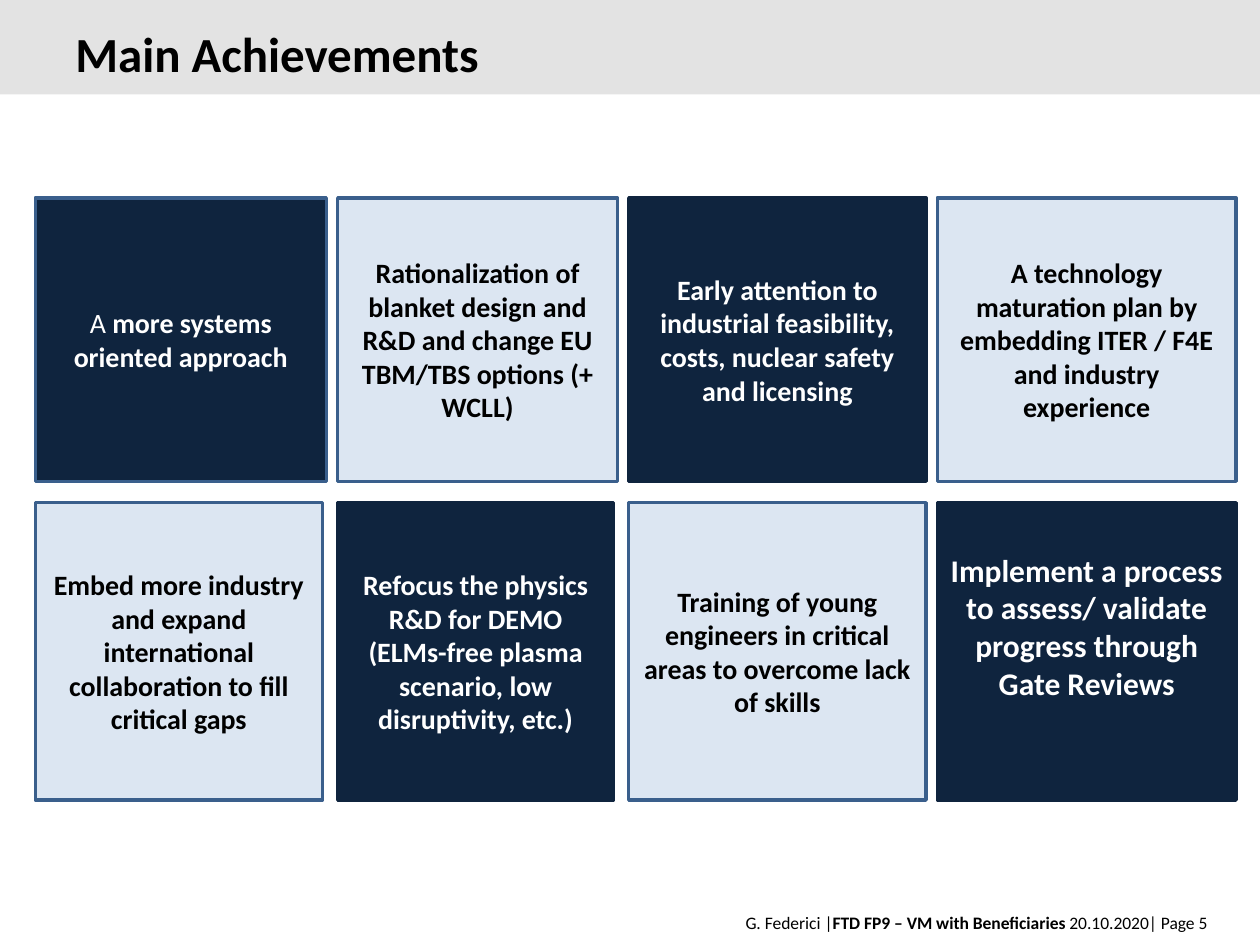
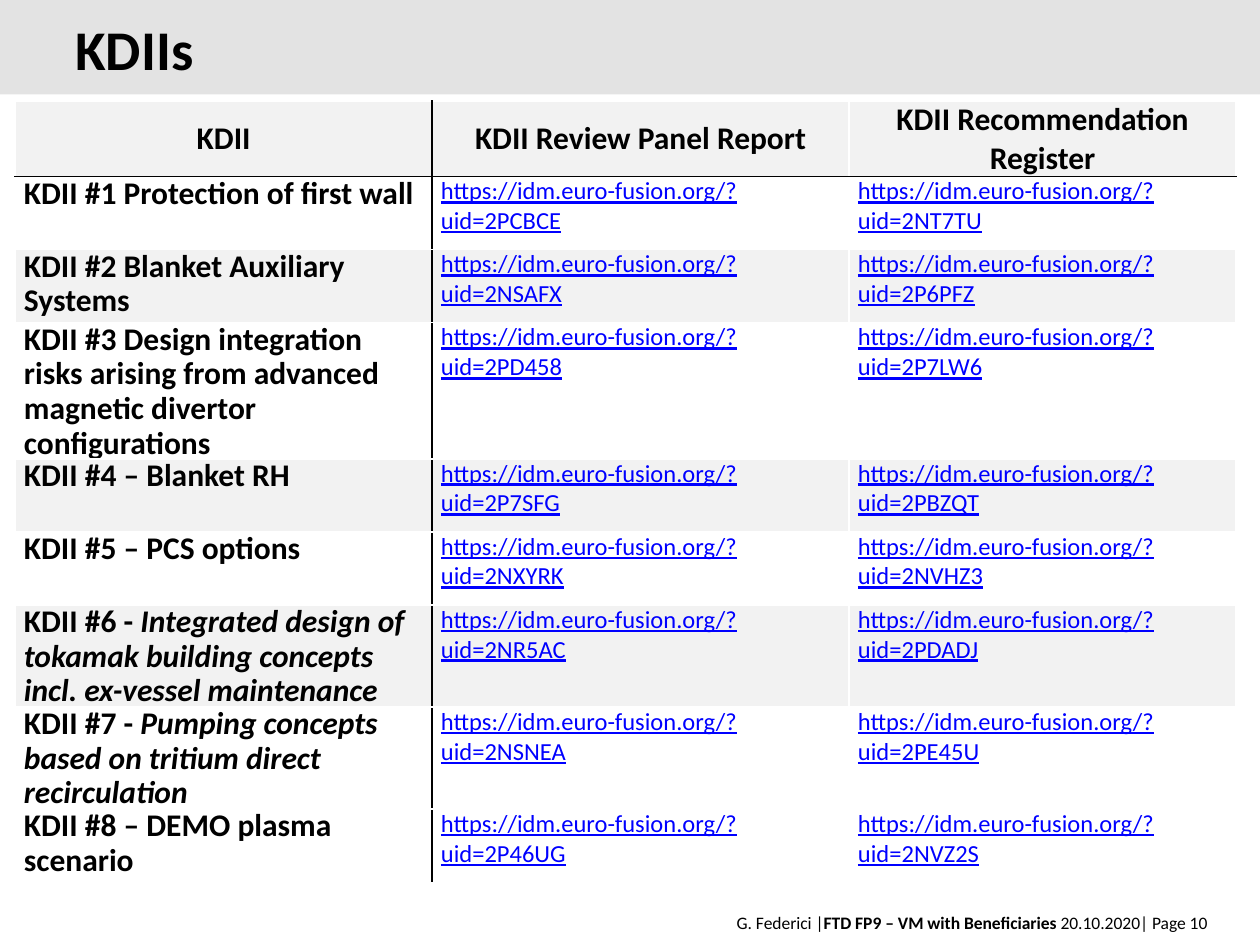
from dataclasses import dataclass

from lxml import etree
from pptx import Presentation, util as u
from pptx.dml.color import RGBColor
from pptx.enum import shapes, text
from pptx.oxml.ns import qn


@dataclass(frozen=True)
class Theme:
    font: str = "Calibri"
    black: str = "000000"
    white: str = "FFFFFF"
    band: str = "E3E3E3"
    navy: str = "0F243E"
    pale_blue: str = "DCE6F2"
    outline: str = "3A5F8C"
    stripe: str = "F2F2F2"
    link: str = "0000FF"
    footer_size: int = 10
    link_size: int = 14
    tile_size: int = 16
    large_size: int = 18
    title_size: int = 28
    title_large_size: int = 32


THEME = Theme()
WIDTH, HEIGHT = 10, 7.5
BAND_SHARE = 0.1

TILE_LEFTS = (0.28, 2.68, 4.99, 7.44)
TILE_RIGHT = 9.9
TILE_GUTTER = 0.09
TILE_ROWS = ((1.57, 2.25), (3.99, 2.36))
LOWER_ROW_TRIM = (0.03, 0.03, 0, 0)

ACHIEVEMENTS = (
    ([("A ", {"bold": False}), ("more systems oriented approach", {})],
     "Rationalization of blanket design and R&D and change EU TBM/TBS options (+ WCLL)",
     "Early attention to industrial feasibility, costs, nuclear safety and licensing",
     "A technology maturation plan by embedding ITER / F4E and industry experience"),
    ("Embed more industry and expand international collaboration to fill critical gaps",
     "Refocus the physics R&D for DEMO (ELMs-free plasma scenario, low disruptivity, etc.)",
     "Training of young engineers in critical areas to overcome lack of skills",
     "Implement a process to assess/ validate progress through Gate Reviews"),
)

KDII_HEADER = ("KDII", "KDII Review Panel Report", "KDII Recommendation Register")
KDII_COLUMNS = (3.31, 3.31, 3.07)
LINK_BASE = "https://idm.euro-fusion.org/?uid="
# label, italic part of the label, report id, register id
KDII_ROWS = (
    ("KDII #1 Protection of first wall", "", "2PCBCE", "2NT7TU"),
    ("KDII #2 Blanket Auxiliary Systems", "", "2NSAFX", "2P6PFZ"),
    ("KDII #3 Design integration risks arising from advanced magnetic divertor configurations",
     "", "2PD458", "2P7LW6"),
    ("KDII #4 – Blanket RH", "", "2P7SFG", "2PBZQT"),
    ("KDII #5 – PCS options", "", "2NXYRK", "2NVHZ3"),
    ("KDII #6 - ", "Integrated design of tokamak building concepts incl. ex-vessel maintenance",
     "2NR5AC", "2PDADJ"),
    ("KDII #7 - ", "Pumping concepts based on tritium direct recirculation",
     "2NSNEA", "2PE45U"),
    ("KDII #8 – DEMO plasma scenario", "", "2P46UG", "2NVZ2S"),
)


def color(value):
    return RGBColor.from_string(value)


def write_text(frame, content, align=text.PP_ALIGN.LEFT, line_spacing=None, **font_format):
    """Fill the first paragraph with a string or with (string, format overrides) runs."""
    paragraph = frame.paragraphs[0]
    paragraph.alignment = align
    if line_spacing:
        paragraph.line_spacing = line_spacing
    runs = [(content, {})] if isinstance(content, str) else content
    for words, overrides in runs:
        style = {"size": THEME.tile_size, "ink": THEME.black, "bold": False,
                 "italic": False, "underline": False, **font_format, **overrides}
        run = paragraph.add_run()
        run.text = words
        font = run.font
        font.name = THEME.font
        font.size = u.Pt(style["size"])
        font.color.rgb = color(style["ink"])
        font.bold = style["bold"]
        font.italic = style["italic"]
        font.underline = style["underline"]


def add_box(slide, box, fill, line=None):
    shape = slide.shapes.add_shape(shapes.MSO_SHAPE.RECTANGLE, *map(u.Inches, box))
    shape.shadow.inherit = False
    shape.fill.solid()
    shape.fill.fore_color.rgb = color(fill)
    if line:
        shape.line.color.rgb = color(line)
        shape.line.width = u.Pt(2)
    else:
        shape.line.fill.background()
    return shape


def add_label(slide, box, content, **text_format):
    frame = slide.shapes.add_textbox(*map(u.Inches, box)).text_frame
    frame.word_wrap = True
    frame.vertical_anchor = text.MSO_ANCHOR.MIDDLE
    write_text(frame, content, **text_format)


def add_page(presentation, title, title_size, page):
    """Add a blank slide with the shared band, title and footer."""
    slide = presentation.slides.add_slide(presentation.slide_layouts[6])
    add_box(slide, (0, 0, WIDTH, HEIGHT * BAND_SHARE), THEME.band)
    add_label(slide, (0.67, 7.2, 9.01, 0.25),
              [("G. Federici |", {}), ("FTD FP9 – VM with Beneficiaries", {"bold": True}),
               (f" 20.10.2020| Page {page}", {})],
              align=text.PP_ALIGN.RIGHT, size=THEME.footer_size)
    add_label(slide, (0.5, 0.18, 8.25, 0.5), title, size=title_size, bold=True,
              line_spacing=u.Pt(32))
    return slide


def tile_box(row, column):
    left = TILE_LEFTS[column]
    following = (*TILE_LEFTS[1:], TILE_RIGHT)[column]
    width = following - left - TILE_GUTTER - row * LOWER_ROW_TRIM[column]
    top, height = TILE_ROWS[row]
    return left, top, width, height


def add_achievement_tiles(slide):
    for row, achievements in enumerate(ACHIEVEMENTS):
        for column, achievement in enumerate(achievements):
            dark = (row + column) % 2 == 0
            first = row == column == 0
            last = (row, column) == (1, 3)
            tile = add_box(slide, tile_box(row, column),
                           THEME.navy if dark else THEME.pale_blue,
                           THEME.navy if dark and not first else THEME.outline)
            frame = tile.text_frame
            frame.word_wrap = True
            frame.vertical_anchor = text.MSO_ANCHOR.MIDDLE
            if last:
                frame.margin_bottom = u.Inches(0.45)
            write_text(frame, achievement, align=text.PP_ALIGN.CENTER, bold=True,
                       ink=THEME.white if dark else THEME.black,
                       size=THEME.large_size if last else THEME.tile_size)


def set_borders(cell, **sides):
    """Draw one-point borders; sides are L, R, T and B, in that order."""
    properties = cell._tc.get_or_add_tcPr()
    for side, ink in sides.items():
        line = etree.SubElement(properties, qn(f"a:ln{side}"), w=str(u.Pt(1)))
        fill = etree.SubElement(line, qn("a:solidFill"))
        etree.SubElement(fill, qn("a:srgbClr"), val=ink)


def format_cell(cell, row, column):
    def ink(is_black):
        return THEME.black if is_black else THEME.white

    cell.margin_left = cell.margin_right = u.Inches(0.07)
    cell.margin_top = cell.margin_bottom = 0
    set_borders(cell, L=ink(column == 1), R=ink(column == 0),
                T=ink(row == 1), B=ink(row == 0))
    if row % 2 == 0 and row < len(KDII_ROWS):
        cell.fill.solid()
        cell.fill.fore_color.rgb = color(THEME.stripe)
    else:
        cell.fill.background()


def add_kdii_table(slide):
    row_heights = [0.38] + [0.58] * len(KDII_ROWS)
    frame = slide.shapes.add_table(
        len(row_heights), len(KDII_COLUMNS), u.Inches(0.12), u.Inches(0.8),
        u.Inches(sum(KDII_COLUMNS)), u.Inches(sum(row_heights)))
    table = frame.table
    table.first_row = table.horz_banding = False
    for column, width in zip(table.columns, KDII_COLUMNS):
        column.width = u.Inches(width)
    for row, height in zip(table.rows, row_heights):
        row.height = u.Inches(height)
    for row in range(len(row_heights)):
        for column in range(len(KDII_COLUMNS)):
            format_cell(table.cell(row, column), row, column)

    heading = {"size": THEME.large_size, "bold": True}
    for column, words in enumerate(KDII_HEADER):
        cell = table.cell(0, column)
        cell.vertical_anchor = text.MSO_ANCHOR.MIDDLE
        write_text(cell.text_frame, words, align=text.PP_ALIGN.CENTER, **heading)
    for row, (label, topic, *documents) in enumerate(KDII_ROWS, start=1):
        runs = [(label, {})] + ([(topic, {"italic": True})] if topic else [])
        write_text(table.cell(row, 0).text_frame, runs, line_spacing=0.9, **heading)
        for column, document in enumerate(documents, start=1):
            write_text(table.cell(row, column).text_frame, LINK_BASE + document,
                       size=THEME.link_size, ink=THEME.link, underline=True)


def main():
    presentation = Presentation()
    presentation.slide_width = u.Inches(WIDTH)
    presentation.slide_height = u.Inches(HEIGHT)
    add_achievement_tiles(add_page(presentation, "Main Achievements", THEME.title_size, 5))
    add_kdii_table(add_page(presentation, "KDIIs", THEME.title_large_size, 10))
    presentation.save("out.pptx")


if __name__ == "__main__":
    main()
